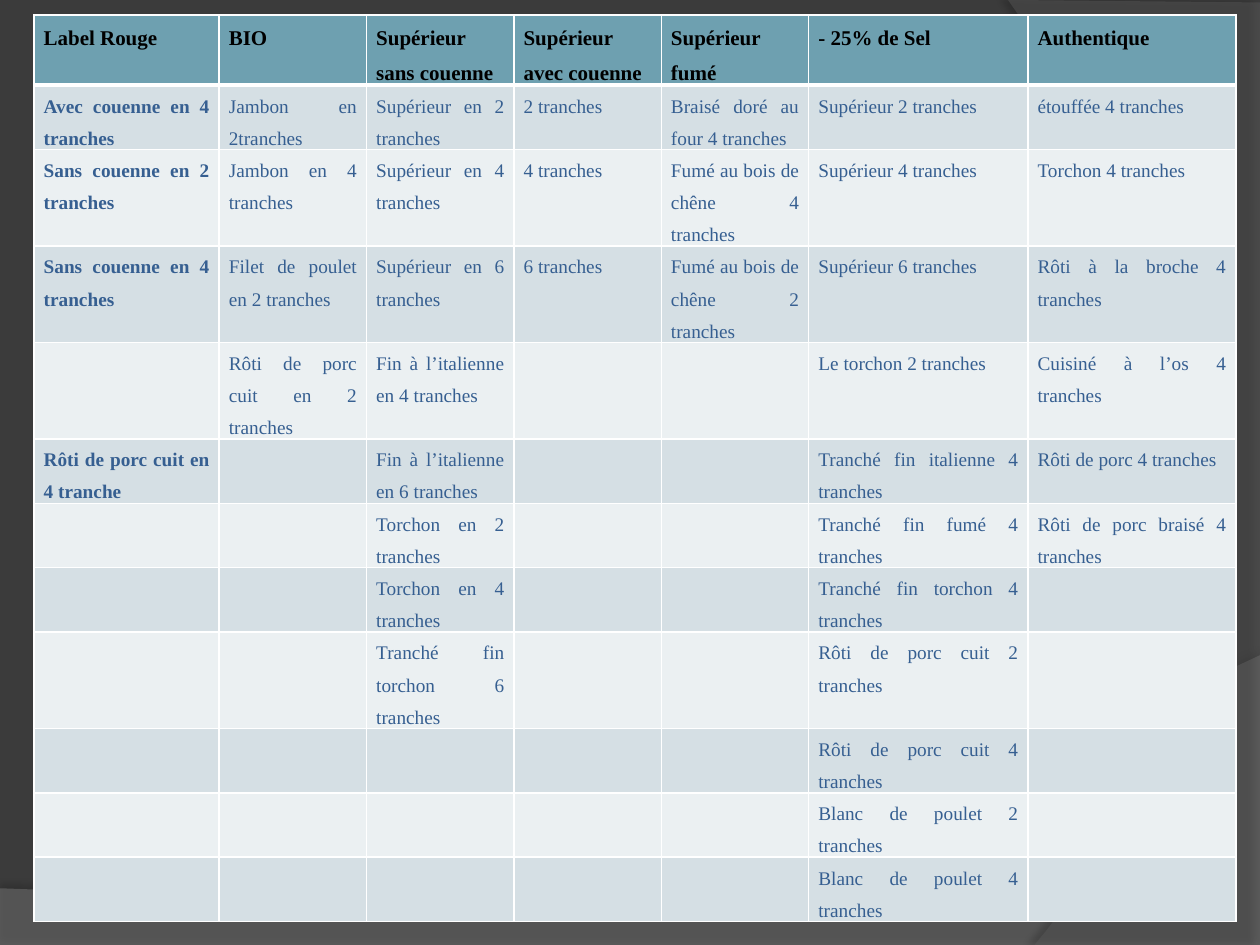
from dataclasses import dataclass

from lxml.etree import SubElement
from pptx import Presentation
from pptx.dml.color import RGBColor as Rgb
from pptx.enum.text import PP_ALIGN as Align
from pptx.oxml.ns import qn
from pptx.util import Inches, Pt


@dataclass(frozen=True)
class Theme:
    background: str = "3B3B3B"
    wave: str = "7F7F7F"
    side: str = "5E5E5E"
    shadow: str = "000000"
    header: str = "6EA0B0"
    bands: tuple = ("D5DFE4", "EBF0F2")
    border: str = "FFFFFF"
    header_text: str = "000000"
    body_text: str = "365F91"
    font: str = "Times New Roman"
    header_size: int = 12
    body_size: int = 11


theme = Theme()


def add_color(parent, color, alpha=100):
    node = SubElement(parent, qn("a:srgbClr"), val=color)
    SubElement(node, qn("a:alpha"), val=str(alpha * 1000))


def write_text(cell, text, size=theme.body_size, color=theme.body_text, bold=False):
    para = cell.text_frame.paragraphs[0]
    para.alignment = Align.JUSTIFY
    para.line_spacing = 1.5
    span = para.add_run()
    span.text = text
    span.font.name = theme.font
    span.font.size = Pt(size)
    span.font.bold = bold
    span.font.color.rgb = Rgb.from_string(color)


deck = Presentation()
deck.slide_width, deck.slide_height = Inches(10), Inches(7.5)
page = deck.slides.add_slide(deck.slide_layouts[6])
page.background.fill.solid()
page.background.fill.fore_color.rgb = Rgb.from_string(theme.background)

backdrops = [
    ([(0, 7.05), (0, 7.51), (10, 7.51)],
     [(10, 5.2), (5.59, 7.29), (3.91, 7.19), (0, 7.05)],
     theme.wave, 45, 35, 3.5, 270),
    ([(10, 0.02), (10, 7.5)],
     [(8.21, 7.5), (9.35, 6.19), (10.18, 3), (8, 0)],
     theme.side, 40, 45, 4, 180),
]
steps = 40
for corners, curve, color, alpha, shadow_alpha, distance, angle in backdrops:
    points = list(corners)
    for step in range(steps + 1):
        t = step / steps
        weights = ((1 - t) ** 3, 3 * t * (1 - t) ** 2, 3 * t ** 2 * (1 - t), t ** 3)
        points.append(tuple(
            sum(weight * knot[axis] for weight, knot in zip(weights, curve))
            for axis in (0, 1)
        ))
    outline = [(Inches(x), Inches(y)) for x, y in points]
    builder = page.shapes.build_freeform(*outline[0])
    builder.add_line_segments(outline[1:], close=True)
    backdrop = builder.convert_to_shape()
    backdrop.line.fill.background()
    backdrop.fill.solid()
    backdrop.fill.fore_color.rgb = Rgb.from_string(color)
    fill_color = backdrop.fill._xPr.find(qn("a:solidFill"))[0]
    SubElement(fill_color, qn("a:alpha"), val=str(alpha * 1000))
    backdrop.shadow.inherit = False
    effects = backdrop.element.spPr.find(qn("a:effectLst"))
    shadow = SubElement(
        effects, qn("a:outerShdw"), blurRad=str(Pt(4)), dist=str(Pt(distance)),
        dir=str(angle * 60000), algn="ctr", rotWithShape="0",
    )
    add_color(shadow, theme.shadow, shadow_alpha)

rows = [
    ["Label Rouge", "BIO", "Supérieur sans couenne", "Supérieur avec couenne",
     "Supérieur fumé", "- 25% de Sel", "Authentique"],
    ["Avec couenne en 4 tranches", "Jambon en 2tranches", "Supérieur en 2 tranches",
     "2 tranches", "Braisé doré au four 4 tranches", "Supérieur 2 tranches",
     "étouffée 4 tranches"],
    ["Sans couenne en 2 tranches", "Jambon en 4 tranches", "Supérieur en 4 tranches",
     "4 tranches", "Fumé au bois de chêne 4 tranches", "Supérieur 4 tranches",
     "Torchon 4 tranches"],
    ["Sans couenne en 4 tranches", "Filet de poulet en 2 tranches",
     "Supérieur en 6 tranches", "6 tranches", "Fumé au bois de chêne 2 tranches",
     "Supérieur 6 tranches", "Rôti à la broche 4 tranches"],
    ["", "Rôti de porc cuit en 2 tranches", "Fin à l’italienne en 4 tranches", "", "",
     "Le torchon 2 tranches", "Cuisiné à l’os 4 tranches"],
    ["Rôti de porc cuit en 4 tranche", "", "Fin à l’italienne en 6 tranches", "", "",
     "Tranché fin italienne 4 tranches", "Rôti de porc 4 tranches"],
    ["", "", "Torchon en 2 tranches", "", "", "Tranché fin fumé 4 tranches",
     "Rôti de porc braisé 4 tranches"],
    ["", "", "Torchon en 4 tranches", "", "", "Tranché fin torchon 4 tranches", ""],
    ["", "", "Tranché fin torchon 6 tranches", "", "", "Rôti de porc cuit 2 tranches", ""],
    ["", "", "", "", "", "Rôti de porc cuit 4 tranches", ""],
    ["", "", "", "", "", "Blanc de poulet 2 tranches", ""],
    ["", "", "", "", "", "Blanc de poulet 4 tranches", ""],
]
widths = [1.47, 1.17, 1.17, 1.17, 1.17, 1.74, 1.65]
row_height = 0.41
side_margin = Pt(5.5)
products = page.shapes.add_table(
    len(rows), len(widths), Inches(0.27), Inches(0.12),
    Inches(sum(widths)), Inches(row_height * len(rows)),
).table
for column, width in zip(products.columns, widths):
    column.width = Inches(width)

for row_index, texts in enumerate(rows):
    products.rows[row_index].height = Inches(row_height)
    is_header = row_index == 0
    for column_index, text in enumerate(texts):
        cell = products.cell(row_index, column_index)
        cell.margin_left = cell.margin_right = side_margin
        cell.margin_top = cell.margin_bottom = 0
        top = 3 if row_index == 1 else 1
        bottom = 3 if is_header else 1
        properties = cell._tc.get_or_add_tcPr()
        for side, weight in (("L", 1), ("R", 1), ("T", top), ("B", bottom)):
            line = SubElement(properties, qn(f"a:ln{side}"), w=str(Pt(weight)))
            add_color(SubElement(line, qn("a:solidFill")), theme.border)
        cell.fill.solid()
        band = theme.header if is_header else theme.bands[(row_index - 1) % 2]
        cell.fill.fore_color.rgb = Rgb.from_string(band)
        if is_header:
            write_text(cell, text, size=theme.header_size, color=theme.header_text, bold=True)
        elif text:
            write_text(cell, text, bold=column_index == 0)

deck.save("out.pptx")
